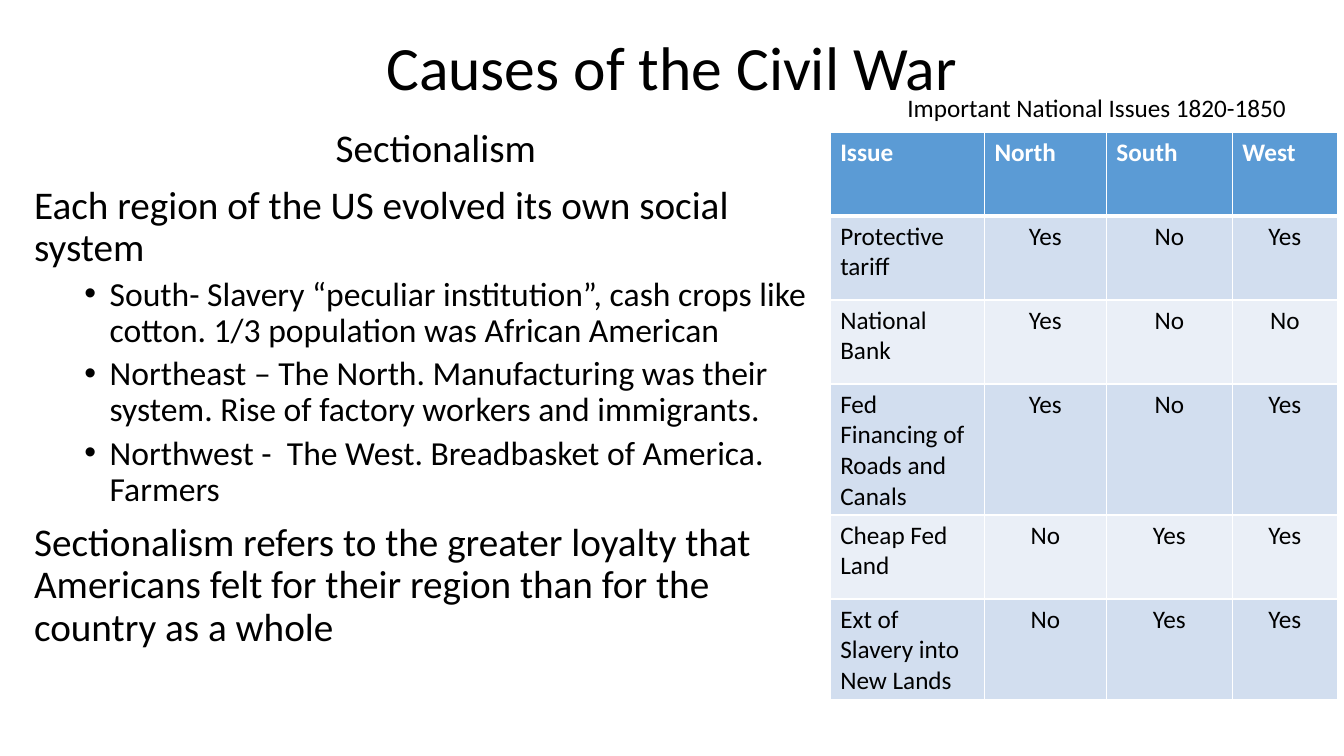
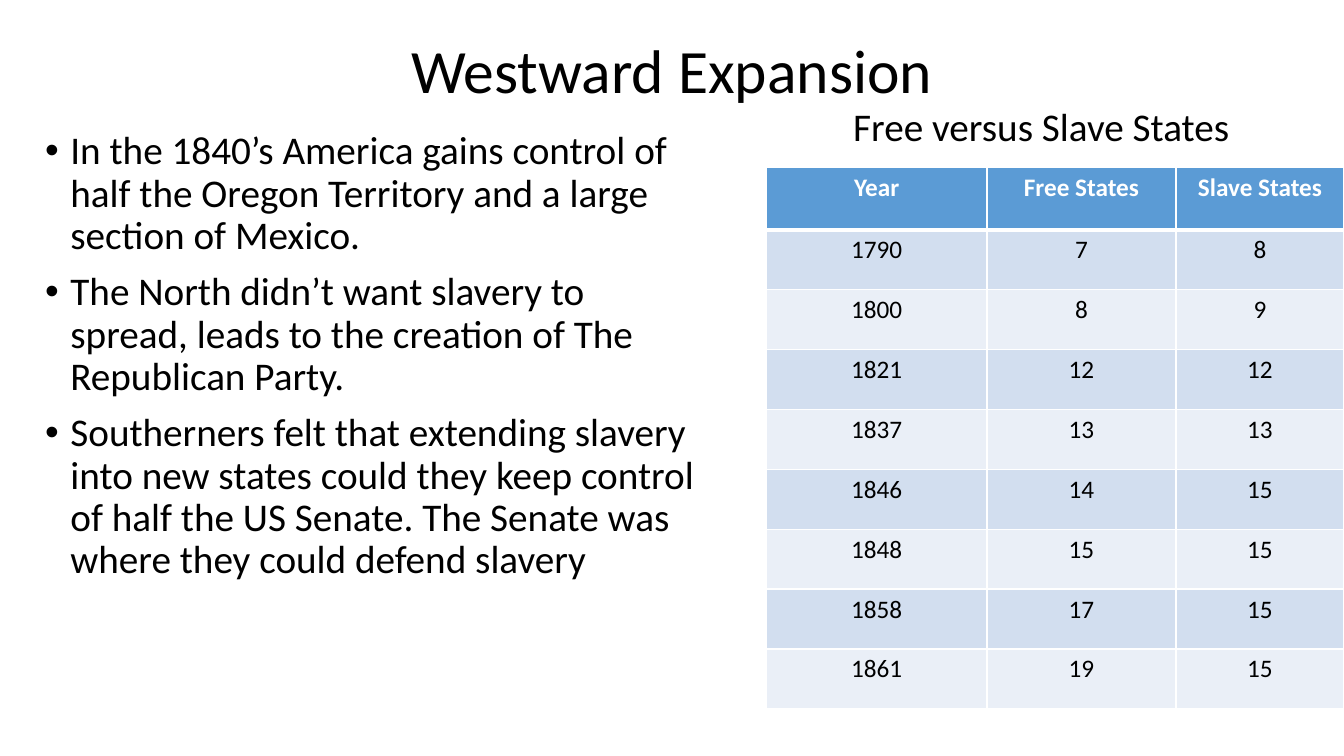
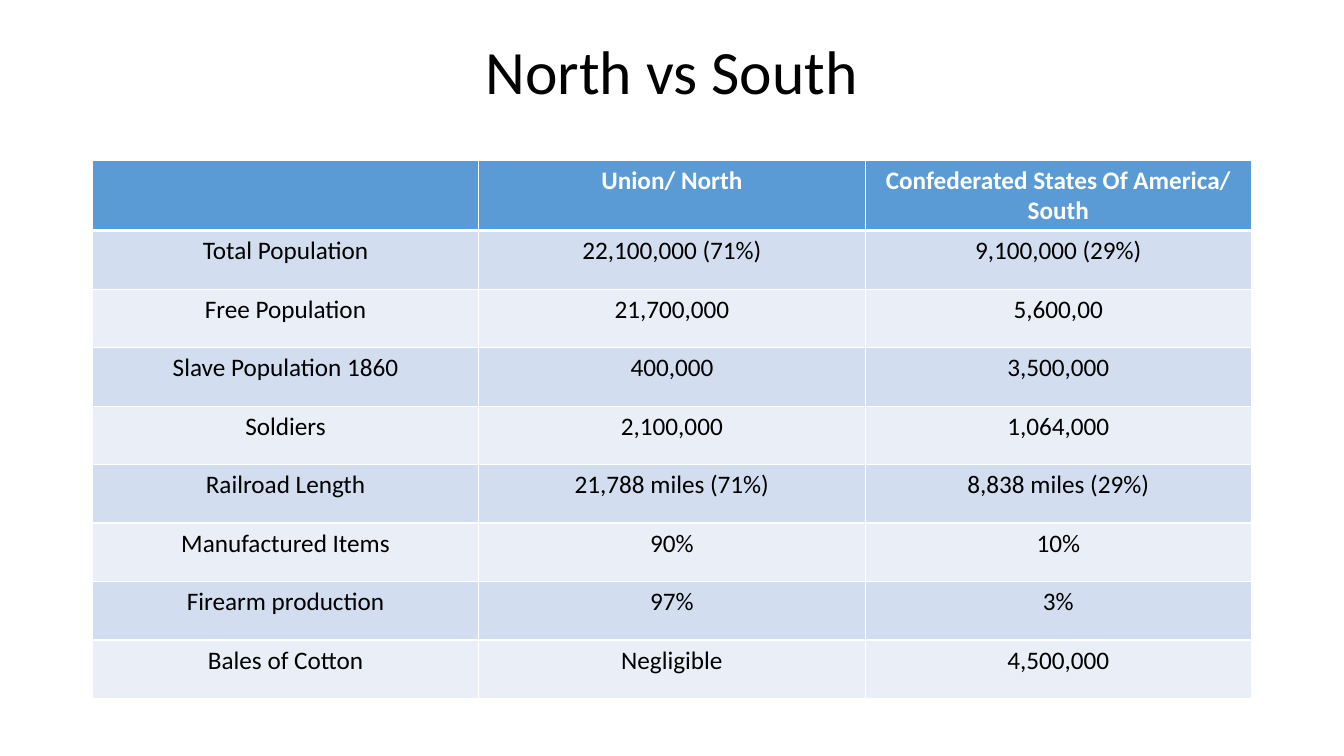
"""Build three slides on the causes of the Civil War."""
from lxml.etree import SubElement as Sub
from pptx import Presentation as Deck
from pptx.dml.color import RGBColor as RGB
from pptx.enum.text import MSO_ANCHOR as Anchor, PP_ALIGN as Align
from pptx.oxml.ns import qn
from pptx.util import Pt

HUES = {"text": "000000", "white": "FFFFFF", "head": "5B9BD5",
        "odd": "D2DEEF", "even": "EAEFF7"}
FONT = "Calibri"
MID, LEFT = Align.CENTER, Align.LEFT
FORMS = {
    "title": {"size": 44, "para": {"alignment": MID, "line_spacing": 0.9}},
    "label": {"size": 18, "para": {"alignment": MID}},
    "topic": {"size": 28, "para": {"alignment": MID}},
    "lead": {"size": 28, "para": {"alignment": MID, "line_spacing": 0.9,
                                  "space_before": Pt(10)}},
    "plain": {"size": 28, "para": {"alignment": LEFT, "line_spacing": 0.9,
                                   "space_before": Pt(10)}},
    "point": {"size": 28, "indent": 18,
              "para": {"alignment": LEFT, "line_spacing": 0.9,
                       "space_before": Pt(10)}},
    "sub": {"size": 24, "indent": 54,
            "para": {"alignment": LEFT, "line_spacing": 0.9,
                     "space_before": Pt(5), "level": 1}},
}
SIDES = ("lnL", "lnR", "lnT", "lnB")

SLIDES = [
    {"texts": [
        ((66, 12.2, 828, 76.3), [("title", "Causes of the Civil War")]),
        ((17.3, 88.6, 588.2, 398.2), [
            ("lead", "Sectionalism"),
            ("plain", "Each region of the US evolved its own social system"),
            ("sub", "South- Slavery “peculiar institution”, cash crops like "
                    "cotton. 1/3 population was African American"),
            ("sub", "Northeast – The North. Manufacturing was their system. "
                    "Rise of factory workers and immigrants."),
            ("sub", "Northwest -  The West. Breadbasket of America. Farmers"),
            ("plain", "Sectionalism refers to the greater loyalty that "
                      "Americans felt for their region than for the country "
                      "as a whole")]),
        ((632.2, 62.6, 302.4, 51.1),
         [("label", "Important National Issues 1820-1850")])],
     "at": (593, 94.3), "cols": (110.2, 87.1, 90, 74.9),
     "rows": (60, 60), "flush": True,
     "cells": [
         ("Issue", "North", "South", "West"),
         ("Protective tariff", "Yes", "No", "Yes"),
         ("National Bank", "Yes", "No", "No"),
         ("Fed Financing of Roads and Canals", "Yes", "No", "Yes"),
         ("Cheap Fed Land", "No", "Yes", "Yes"),
         ("Ext of Slavery into New Lands", "No", "Yes", "Yes")]},
    {"texts": [
        ((66, 15.1, 828, 74.9), [("title", "Westward Expansion")]),
        ((25.2, 90, 486, 426.2), [
            ("point", "In the 1840’s America gains control of half the "
                      "Oregon Territory and a large section of Mexico."),
            ("point", "The North didn’t want slavery to spread, leads to the "
                      "creation of The Republican Party."),
            ("point", "Southerners felt that extending slavery into new "
                      "states could they keep control of half the US Senate. "
                      "The Senate was where they could defend slavery")]),
        ((552.2, 69.8, 383, 41), [("topic", "Free versus Slave States")])],
     "at": (547.5, 119.5), "cols": (157.5, 135, 120),
     "rows": (44.6, 42.8), "flush": False,
     "cells": [
         ("Year", "Free States", "Slave States"),
         ("1790", "7", "8"),
         ("1800", "8", "9"),
         ("1821", "12", "12"),
         ("1837", "13", "13"),
         ("1846", "14", "15"),
         ("1848", "15", "15"),
         ("1858", "17", "15"),
         ("1861", "19", "15")]},
    {"texts": [((66, 12.2, 828, 82.1), [("title", "North vs South")])],
     "at": (66, 114.3), "cols": (276, 276, 276),
     "rows": (41.8, 41.8), "flush": False,
     "cells": [
         ("", "Union/ North", "Confederated States Of America/ South"),
         ("Total Population", "22,100,000 (71%)", "9,100,000 (29%)"),
         ("Free Population", "21,700,000", "5,600,00"),
         ("Slave Population 1860", "400,000", "3,500,000"),
         ("Soldiers", "2,100,000", "1,064,000"),
         ("Railroad Length", "21,788 miles (71%)", "8,838 miles (29%)"),
         ("Manufactured Items", "90%", "10%"),
         ("Firearm production", "97%", "3%"),
         ("Bales of Cotton", "Negligible", "4,500,000")]},
]


def write(para, text, size, hue="text", bold=False):
    run = para.add_run()
    run.text = text
    for key, val in {"name": FONT, "size": Pt(size), "bold": bold}.items():
        setattr(run.font, key, val)
    run.font.color.rgb = RGB.from_string(HUES[hue])


def edge(cell, side, width):
    line = Sub(cell._tc.get_or_add_tcPr(), qn("a:" + side), w=str(Pt(width)))
    fill = Sub(line, qn("a:solidFill"))
    Sub(fill, qn("a:srgbClr"), val=HUES["white"])


deck = Deck()
deck.slide_width, deck.slide_height = Pt(960), Pt(540)

for page in SLIDES:
    slide = deck.slides.add_slide(deck.slide_layouts[6])
    for box, lines in page["texts"]:
        frame = slide.shapes.add_textbox(*map(Pt, box)).text_frame
        frame.word_wrap = True
        if lines[0][0] == "title":
            frame.vertical_anchor = Anchor.MIDDLE
        for num, (kind, text) in enumerate(lines):
            para = frame.add_paragraph() if num else frame.paragraphs[0]
            form = FORMS[kind]
            for key, val in form["para"].items():
                setattr(para, key, val)
            if "indent" in form:
                props = para._p.get_or_add_pPr()
                props.set("marL", str(Pt(form["indent"])))
                props.set("indent", str(Pt(-18)))
                Sub(props, qn("a:buFont"), typeface="Arial")
                Sub(props, qn("a:buChar"), char="•")
            write(para, text, form["size"])

    cells, cols = page["cells"], page["cols"]
    first, rest = page["rows"]
    high = first + rest * (len(cells) - 1)
    area = map(Pt, (*page["at"], sum(cols), high))
    table = slide.shapes.add_table(len(cells), len(cols), *area).table
    for col, wide in zip(table.columns, cols):
        col.width = Pt(wide)
    for r, row in enumerate(cells):
        table.rows[r].height = Pt(rest if r else first)
        hue = ("even", "odd")[r % 2] if r else "head"
        for c, text in enumerate(row):
            cell = table.cell(r, c)
            for side in SIDES:
                thick = (r, side) in ((0, "lnB"), (1, "lnT"))
                edge(cell, side, 3 if thick else 1)
            cell.fill.solid()
            cell.fill.fore_color.rgb = RGB.from_string(HUES[hue])
            para = cell.text_frame.paragraphs[0]
            flush = page["flush"] and (r == 0 or c == 0)
            para.alignment = LEFT if flush else MID
            if text:
                write(para, text, 18, "text" if r else "white", r == 0)

deck.save("out.pptx")
